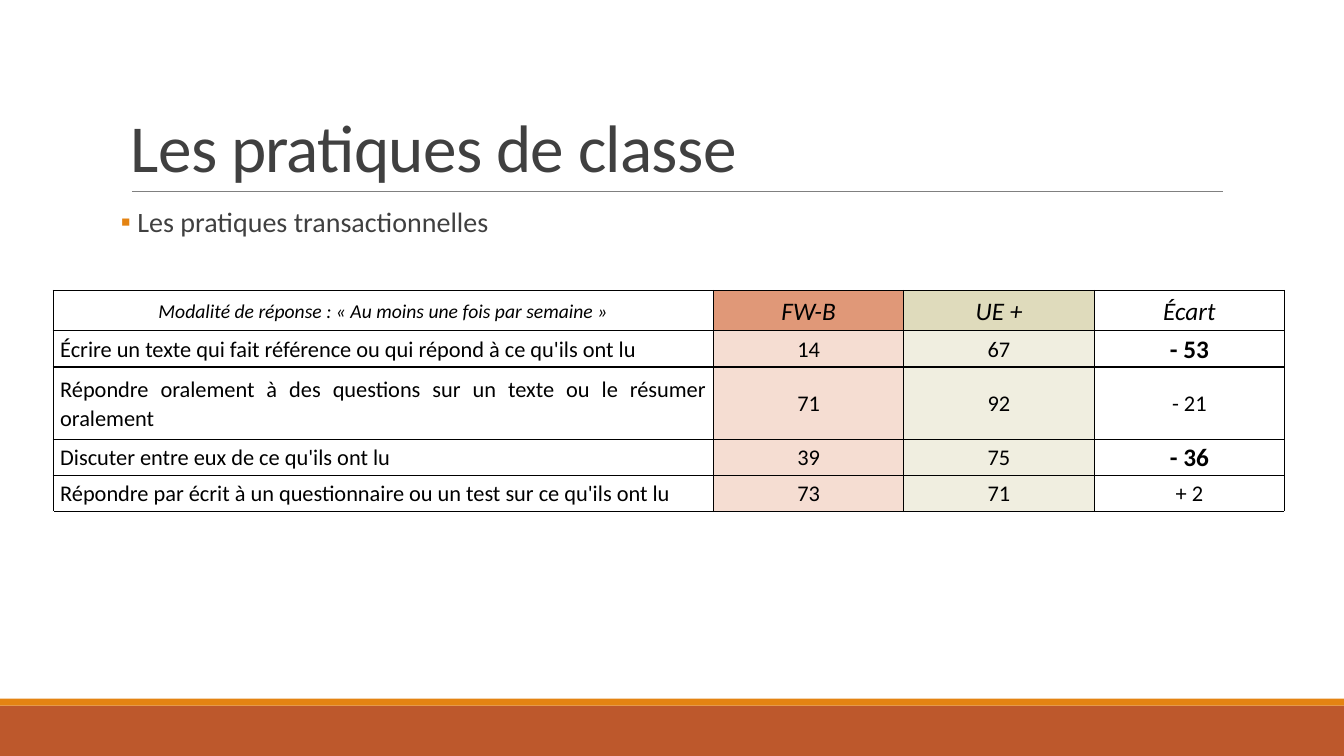
from lxml import etree
from pptx import Presentation
from pptx.dml.color import RGBColor
from pptx.enum import shapes, text
from pptx.oxml import ns
from pptx.util import Pt

FONT = "Calibri"
BLACK, GREY = "000000", "404040"
RUST, ORANGE = "BD582C", "E48312"
HEADER_FILLS = [None, "E09878", "DFDBBC", None]
BODY_FILLS = [None, "F5DDD2", "F0EEE0", None]
ROWS = [
    ["Modalité de réponse : « Au moins une fois par semaine »", "FW-B", "UE +", "Écart"],
    ["Écrire un texte qui fait référence ou qui répond à ce qu'ils ont lu", "14", "67", "- 53"],
    ["Répondre oralement à des questions sur un texte ou le résumer oralement", "71", "92", "- 21"],
    ["Discuter entre eux de ce qu'ils ont lu", "39", "75", "- 36"],
    ["Répondre par écrit à un questionnaire ou un test sur ce qu'ils ont lu", "73", "71", "+ 2"],
]
STRONG_GAPS = {"- 53", "- 36"}
COL_WIDTHS = [471.6, 136, 136, 136]
ROW_HEIGHTS = [28.8, 25.8, 51.6, 25.8, 25.8, 34.6]


def color(value):
    return RGBColor.from_string(value)


def style_run(p, size, value, bold=False, italic=False):
    font = p.runs[0].font
    font.name, font.size = FONT, Pt(size)
    font.bold, font.italic = bold, italic
    font.color.rgb = color(value)


def add_text(slide, box, content, size, line_spacing, anchor, inset):
    sp = slide.shapes.add_textbox(*map(Pt, box))
    tf = sp.text_frame
    tf.word_wrap = True
    tf.vertical_anchor = anchor
    tf.margin_left = tf.margin_right = Pt(inset)
    p = tf.paragraphs[0]
    p.text = content
    p.line_spacing = line_spacing
    style_run(p, size, GREY)
    return p


def add_footer(slide, left, top, width, height):
    stripe = 5
    for y, h, fill in [(top + stripe, height - stripe, RUST), (top, stripe, ORANGE)]:
        sp = slide.shapes.add_shape(shapes.MSO_SHAPE.RECTANGLE, Pt(left), Pt(y), Pt(width), Pt(h))
        sp.shadow.inherit = False
        sp.fill.solid()
        sp.fill.fore_color.rgb = color(fill)
        sp.line.fill.background()


def add_title(slide, left, top, width, height):
    """Add the title and the rule under it."""
    bottom = top + height
    rule = slide.shapes.add_connector(
        shapes.MSO_CONNECTOR.STRAIGHT, Pt(left + 7.9), Pt(bottom), Pt(left + width - 4.9), Pt(bottom))
    rule.line.color.rgb = color("808080")
    rule.line.width = Pt(0.5)
    etree.SubElement(rule._element.spPr, ns.qn("a:effectLst"))
    p = add_text(slide, (left, top, width, height), "Les pratiques de classe",
                 48, 0.85, text.MSO_ANCHOR.BOTTOM, 7.2)
    p.runs[0]._r.get_or_add_rPr().set("spc", "-50")


def add_bullet(slide, left, top, width, height):
    p = add_text(slide, (left, top, width, height), " Les pratiques transactionnelles",
                 20, 0.9, text.MSO_ANCHOR.TOP, 0)
    p.space_before, p.space_after = Pt(12), Pt(2)
    pPr = p._p.get_or_add_pPr()
    pPr.set("marL", str(Pt(7.2)))
    pPr.set("indent", str(Pt(-7.2)))
    bullet_color = etree.SubElement(pPr, ns.qn("a:buClr"))
    etree.SubElement(bullet_color, ns.qn("a:srgbClr"), val=ORANGE)
    etree.SubElement(pPr, ns.qn("a:buFont"), typeface=FONT)
    etree.SubElement(pPr, ns.qn("a:buChar"), char="▪")


def set_borders(cell, sides):
    tcPr = cell._tc.get_or_add_tcPr()
    for i, side in enumerate(sides):
        ln = etree.Element(ns.qn(f"a:ln{side}"), w=str(Pt(1)))
        fill = etree.SubElement(ln, ns.qn("a:solidFill"))
        etree.SubElement(fill, ns.qn("a:srgbClr"), val=BLACK)
        tcPr.insert(i, ln)


def fill_cell(cell, content, row, col):
    header, label = row == 0, col == 0
    strong = content in STRONG_GAPS
    p = cell.text_frame.paragraphs[0]
    p.text = content
    p.line_spacing = 1.07
    p.alignment = text.PP_ALIGN.JUSTIFY if label and not header else text.PP_ALIGN.CENTER
    if header:
        size = 14 if label else 18
    else:
        size = 18 if strong else 16
    style_run(p, size, BLACK, bold=strong, italic=header)
    cell.vertical_anchor = text.MSO_ANCHOR.MIDDLE
    cell.margin_left = cell.margin_right = Pt(5)
    cell.margin_top = cell.margin_bottom = 0
    fill = (HEADER_FILLS if header else BODY_FILLS)[col]
    if fill:
        cell.fill.solid()
        cell.fill.fore_color.rgb = color(fill)
    set_borders(cell, "LRTB")


def add_practice_table(slide, left, top):
    """Add the table, closed by an empty merged row."""
    frame = slide.shapes.add_table(
        len(ROW_HEIGHTS), len(COL_WIDTHS), Pt(left), Pt(top),
        Pt(sum(COL_WIDTHS)), Pt(sum(ROW_HEIGHTS)))
    table = frame.table
    table.first_row = table.horz_banding = False
    for column, width in zip(table.columns, COL_WIDTHS):
        column.width = Pt(width)
    for row, height in zip(table.rows, ROW_HEIGHTS):
        row.height = Pt(height)
    for cell in table.iter_cells():
        cell.fill.background()
    for r, values in enumerate(ROWS):
        for c, value in enumerate(values):
            fill_cell(table.cell(r, c), value, r, c)
    last = len(ROWS)
    for c in range(len(COL_WIDTHS)):
        set_borders(table.cell(last, c), "T")
    table.cell(last, 0).merge(table.cell(last, len(COL_WIDTHS) - 1))


def main():
    prs = Presentation()
    prs.slide_width, prs.slide_height = Pt(960), Pt(540)
    slide = prs.slides.add_slide(prs.slide_layouts[6])
    add_footer(slide, 0, 499, 960, 41)
    add_title(slide, 86.4, 22.6, 792, 114.2)
    add_bullet(slide, 86.4, 145.4, 792, 41)
    add_practice_table(slide, 38, 207.5)
    prs.save("out.pptx")


if __name__ == "__main__":
    main()
